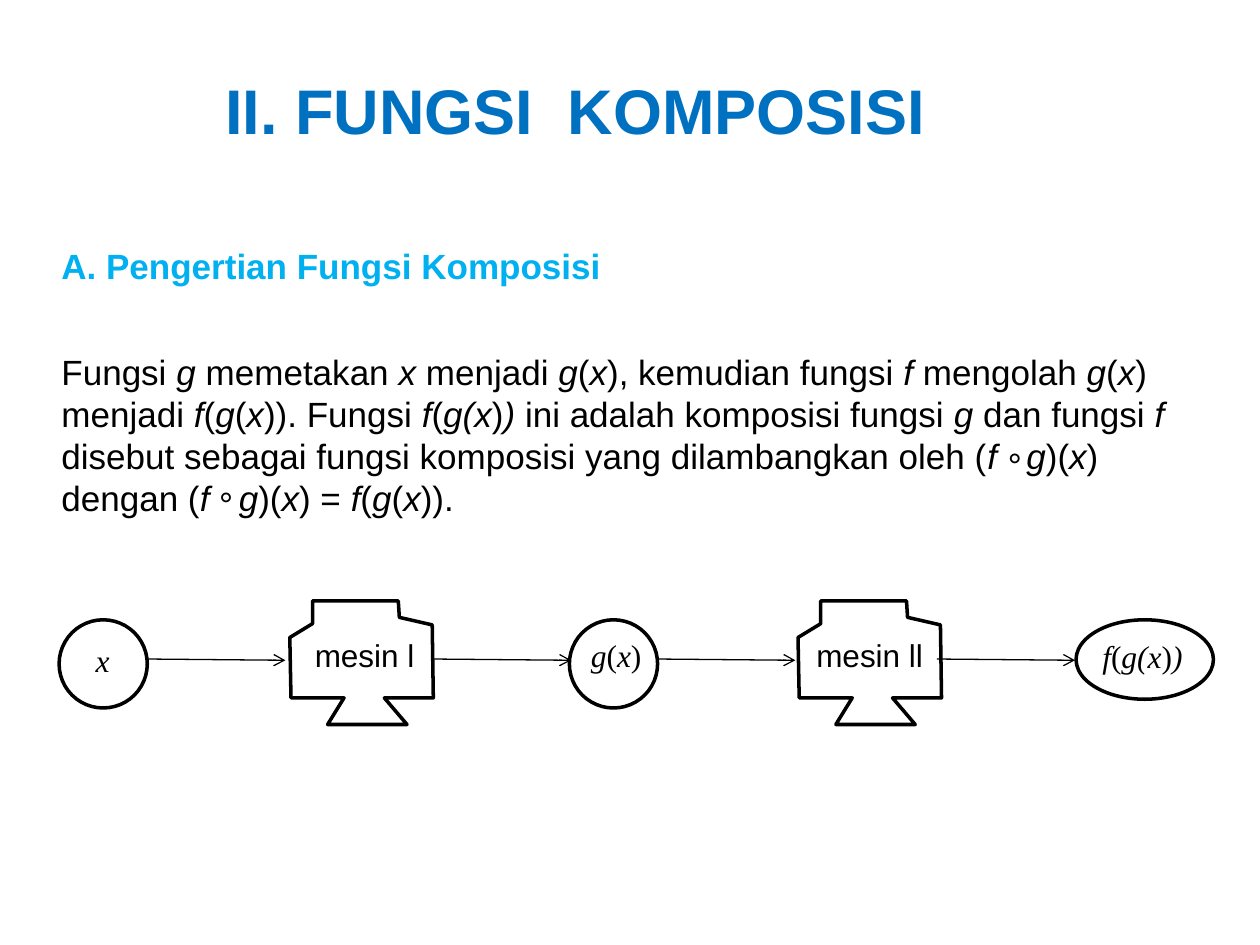
from typing import NamedTuple

from lxml.etree import SubElement
from pptx import Presentation
from pptx.dml.color import RGBColor
from pptx.enum.shapes import MSO_CONNECTOR as CONN, MSO_SHAPE as SHAPE
from pptx.enum.text import MSO_AUTO_SIZE as FIT
from pptx.oxml.ns import qn
from pptx.util import Pt

BLACK, WHITE = "000000", "FFFFFF"
ARIAL, TIMES = "Arial", "Times New Roman"
SYMBOL_GAP = "1110"
MACHINE_TOP = 343.4
MACHINE_LEFTS = (165.6, 456)
MACHINE_OUTLINE = (
    (13, 13), (13, 0), (62, 0), (62.6, 9.4), (81.4, 13.7), (82, 55.4), (54, 55.4),
    (67, 70.6), (21.6, 70.6), (31, 55.4), (0.7, 55.4), (0, 20.9),
)
ARROW_LEFTS = (84.2, 247.5, 375.6, 535.4)
ARROW_LENGTH, ARROW_TOP, ARROW_DROP = 78.9, 376.6, 0.7

BODY = (
    "Fungsi *g *memetakan *x *menjadi *g*(*x*), kemudian fungsi *f *mengolah "
    "*g*(*x*) menjadi *f*(*g*(*x*)). Fungsi *f*(*g(x*)*) *ini adalah komposisi "
    "fungsi *g *dan fungsi *f *disebut sebagai fungsi komposisi yang "
    "dilambangkan oleh (*f** **g*)(*x*) dengan (*f** **g*)(*x*) = *f*(*g*(*x*))."
)


class Box(NamedTuple):
    left: float
    top: float
    width: float
    height: float


class Label(NamedTuple):
    text: str
    box: Box
    size: float = 18
    font: str = ARIAL
    color: str = BLACK
    bold: bool = False
    wrap: bool = False


HEADINGS = (
    Label("II. FUNGSI  KOMPOSISI", Box(121.7, 37.4, 503.3, 51.1), 36, color="0070C0", bold=True, wrap=True),
    Label("A. Pengertian Fungsi Komposisi", Box(28, 136, 343.4, 31.7), 20, color="00B0F0", bold=True, wrap=True),
    Label(BODY, Box(28, 196.6, 646.6, 104.4), 20, wrap=True),
    Label("°", Box(568.8, 249.8, 23, 31.7), 20),
    Label("°", Box(118.1, 272.2, 23, 31.7), 20),
)
ELLIPSES = (
    Box(33.8, 354.2, 50.4, 50.4),
    Box(325.4, 354.2, 50.4, 50.4),
    Box(614.9, 354.2, 78.5, 45.4),
)
DIAGRAM_LABELS = (
    Label("mesin l", Box(172.8, 360, 77, 28.8)),
    Label("mesin ll", Box(459.4, 360, 81.4, 28.8)),
    Label("*x*", Box(47.5, 362.9, 22.3, 28.8), font=TIMES),
    Label("*g*(*x*)", Box(330.5, 360, 43.9, 28.8), font=TIMES),
    Label("*f*(*g(x*)*)*", Box(622.8, 360.7, 61.2, 28.8), font=TIMES),
)


def rgb(value: str) -> RGBColor:
    return RGBColor.from_string(value)


def add_label(shapes, label: Label) -> None:
    tf = shapes.add_textbox(*map(Pt, label.box)).text_frame
    tf.word_wrap = label.wrap
    tf.auto_size = FIT.SHAPE_TO_FIT_TEXT
    p = tf.paragraphs[0]
    for i, part in enumerate(label.text.split("*")):
        if not part:
            continue
        r = p.add_run()
        r.text = part
        fmt = {"name": label.font, "size": Pt(label.size), "bold": label.bold, "italic": i % 2 == 1}
        for key, value in fmt.items():
            setattr(r.font, key, value)
        r.font.color.rgb = rgb(label.color)
        if part == " ":
            r.font._element.set("spc", SYMBOL_GAP)


def style_shape(sp) -> None:
    sp.shadow.inherit = False
    sp.fill.solid()
    sp.fill.fore_color.rgb = rgb(WHITE)
    sp.line.color.rgb = rgb(BLACK)
    sp.line.width = Pt(2)


def add_machine(shapes, left: float) -> None:
    points = [(Pt(left + x), Pt(MACHINE_TOP + y)) for x, y in MACHINE_OUTLINE]
    builder = shapes.build_freeform(*points[0])
    builder.add_line_segments(points[1:], close=True)
    style_shape(builder.convert_to_shape())


def add_arrow(shapes, left: float) -> None:
    ends = (left, ARROW_TOP, left + ARROW_LENGTH, ARROW_TOP + ARROW_DROP)
    cxn = shapes.add_connector(CONN.STRAIGHT, *map(Pt, ends))
    cxn.line.color.rgb = rgb(BLACK)
    cxn.line.width = Pt(0.75)
    SubElement(cxn.line._get_or_add_ln(), qn("a:tailEnd"), type="arrow")
    SubElement(cxn._element.spPr, qn("a:effectLst"))


def main() -> None:
    prs = Presentation()
    prs.slide_width, prs.slide_height = Pt(720), Pt(540)
    s = prs.slides.add_slide(prs.slide_layouts[6])
    for label in HEADINGS:
        add_label(s.shapes, label)
    for left in MACHINE_LEFTS:
        add_machine(s.shapes, left)
    for box in ELLIPSES:
        style_shape(s.shapes.add_shape(SHAPE.OVAL, *map(Pt, box)))
    for left in ARROW_LEFTS:
        add_arrow(s.shapes, left)
    for label in DIAGRAM_LABELS:
        add_label(s.shapes, label)
    prs.save("out.pptx")


if __name__ == "__main__":
    main()
